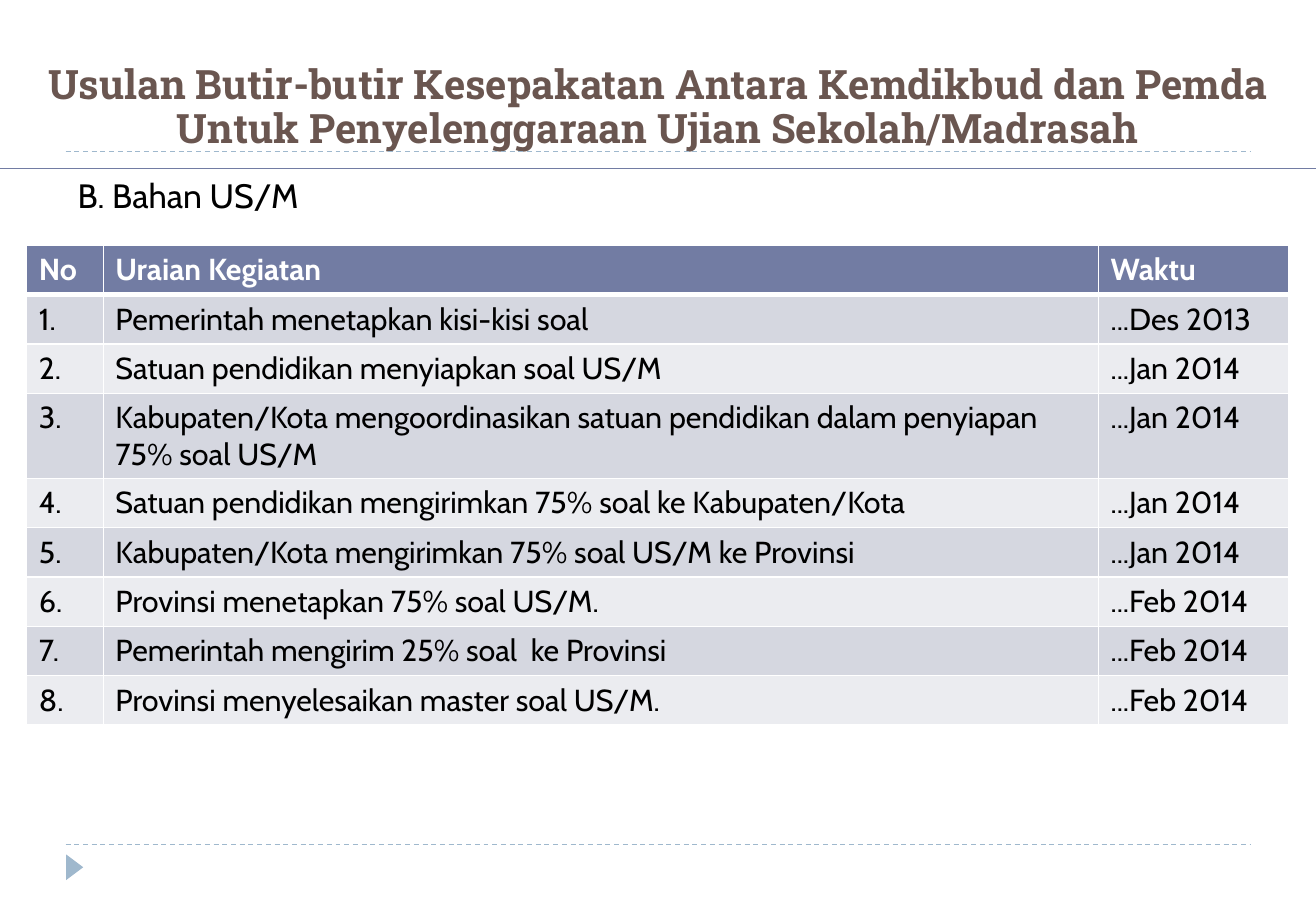
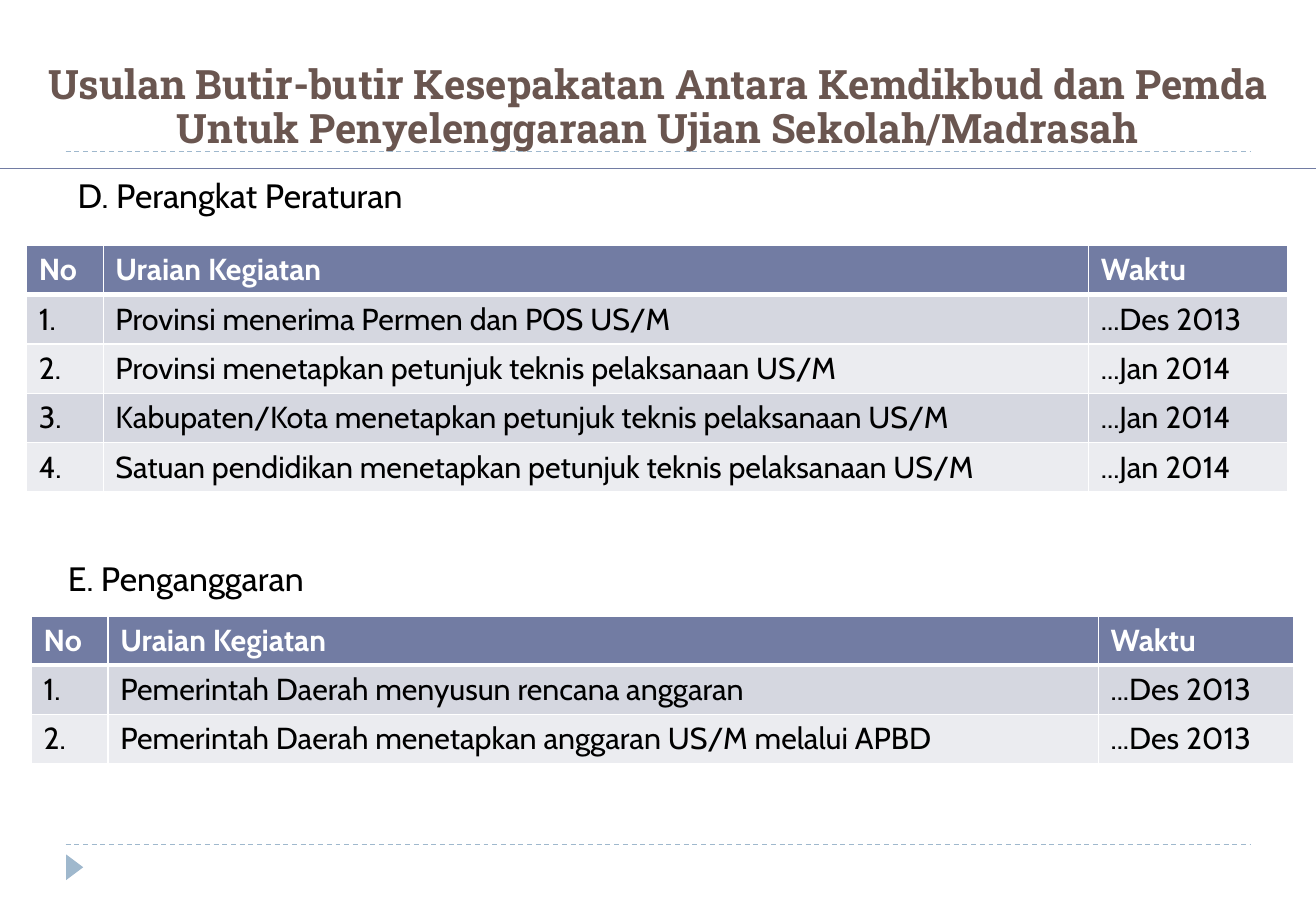
import pptx
import pptx.dml.color
import pptx.enum.dml
import pptx.enum.shapes
import pptx.enum.text
import pptx.oxml.ns
import pptx.util
from lxml import etree

EMU_PER_PX = 9144  # 100 px to the inch
SLIDE_WIDTH, SLIDE_HEIGHT = 1083, 750
COLORS = {
    "title": "6A5650",
    "text": "000000",
    "white": "FFFFFF",
    "header": "727CA3",
    "odd_row": "D5D7E0",
    "even_row": "EBECF0",
    "accent": "9FB8CD",
}
TITLE_FONT, BODY_FONT = "Roboto Slab", "Cabin"
TITLE = ("Usulan Butir-butir Kesepakatan Antara Kemdikbud dan Pemda "
         "Untuk Penyelenggaraan Ujian Sekolah/Madrasah")
HEADINGS = ("Uraian Kegiatan", "Waktu")

MATERIALS = [
    ("Pemerintah menetapkan kisi-kisi soal", "...Des 2013"),
    ("Satuan pendidikan menyiapkan soal US/M", "...Jan 2014"),
    ("Kabupaten/Kota mengoordinasikan satuan pendidikan dalam penyiapan "
     "75% soal US/M", "...Jan 2014"),
    ("Satuan pendidikan mengirimkan 75% soal ke Kabupaten/Kota", "...Jan 2014"),
    ("Kabupaten/Kota mengirimkan 75% soal US/M ke Provinsi", "...Jan 2014"),
    ("Provinsi menetapkan 75% soal US/M.", "...Feb 2014"),
    ("Pemerintah mengirim 25% soal  ke Provinsi", "...Feb 2014"),
    ("Provinsi menyelesaikan master soal US/M.", "...Feb 2014"),
]
REGULATIONS = [
    ("Provinsi menerima Permen dan POS US/M", "...Des 2013"),
    ("Provinsi menetapkan petunjuk teknis pelaksanaan US/M", "...Jan 2014"),
    ("Kabupaten/Kota menetapkan petunjuk teknis pelaksanaan US/M", "...Jan 2014"),
    ("Satuan pendidikan menetapkan petunjuk teknis pelaksanaan US/M", "...Jan 2014"),
]
BUDGET = [
    ("Pemerintah Daerah menyusun rencana anggaran", "...Des 2013"),
    ("Pemerintah Daerah menetapkan anggaran US/M melalui APBD", "...Des 2013"),
]


def px(length):
    return pptx.util.Emu(length * EMU_PER_PX)


ROW_HEIGHT = px(203) // 5


def rgb(name):
    return pptx.dml.color.RGBColor.from_string(COLORS[name])


def add_run(paragraph, text, size, color, font=BODY_FONT, bold=False):
    run = paragraph.add_run()
    run.text = text
    run.font.name = font
    run.font.size = pptx.util.Pt(size)
    run.font.bold = bold
    run.font.color.rgb = rgb(color)


def add_rule(slide, left, right, top, color, dashed=False):
    connector = slide.shapes.add_connector(
        pptx.enum.shapes.MSO_CONNECTOR.STRAIGHT, px(left), px(top), px(right), px(top))
    connector.line.color.rgb = rgb(color)
    connector.line.width = pptx.util.Pt(0.75)
    if dashed:
        connector.line.dash_style = pptx.enum.dml.MSO_LINE.DASH
    etree.SubElement(connector.element.spPr, pptx.oxml.ns.qn("a:effectLst"))


def add_marker(slide):
    triangle = slide.shapes.add_shape(
        pptx.enum.shapes.MSO_SHAPE.ISOSCELES_TRIANGLE, px(51), px(707), px(21), px(14))
    triangle.rotation = 90
    triangle.shadow.inherit = False
    triangle.fill.solid()
    triangle.fill.fore_color.rgb = rgb("accent")
    triangle.line.fill.background()


def format_title(title):
    title.left, title.top, title.width, title.height = px(0), px(5), px(SLIDE_WIDTH), px(125)
    frame = title.text_frame
    frame.auto_size = pptx.enum.text.MSO_AUTO_SIZE.NONE
    frame.vertical_anchor = pptx.enum.text.MSO_ANCHOR.BOTTOM
    paragraph = frame.paragraphs[0]
    paragraph.alignment = pptx.enum.text.PP_ALIGN.CENTER
    paragraph.line_spacing = 0.9
    add_run(paragraph, TITLE, 24, "title", TITLE_FONT, bold=True)


def add_base_slide(presentation):
    """Add a slide with the shared title, rules and footer marker."""
    slide = presentation.slides.add_slide(presentation.slide_layouts[5])
    format_title(slide.shapes.title)
    for top in (125, 695):
        add_rule(slide, 54, 1029, top, "accent", dashed=True)
    add_rule(slide, 0, SLIDE_WIDTH, 139, "header")
    add_marker(slide)
    return slide


def add_section_heading(slide, left, top, text):
    box = slide.shapes.add_textbox(px(left), px(top), px(976), px(47))
    box.text_frame.word_wrap = True
    paragraph = box.text_frame.paragraphs[0]
    paragraph.space_before = pptx.util.Pt(6)
    add_run(paragraph, text, 20, "text")


def set_borders(cell, **widths):
    """Draw white cell borders; widths are points for L, R, T and B."""
    properties = cell._tc.get_or_add_tcPr()
    for side in "LRTB":
        line = etree.SubElement(properties, pptx.oxml.ns.qn("a:ln" + side),
                                w=str(pptx.util.Pt(widths.get(side, 1))))
        fill = etree.SubElement(line, pptx.oxml.ns.qn("a:solidFill"))
        etree.SubElement(fill, pptx.oxml.ns.qn("a:srgbClr"), val=COLORS["white"])


def add_schedule(slide, left, top, column_widths, activities):
    rows = [("No", *HEADINGS)]
    rows += [(f"{number}.", *activity) for number, activity in enumerate(activities, 1)]
    table = slide.shapes.add_table(
        len(rows), len(column_widths), px(left), px(top),
        px(sum(column_widths)), ROW_HEIGHT * len(rows)).table
    for column, width in zip(table.columns, column_widths):
        column.width = px(width)
    for row_index, texts in enumerate(rows):
        is_header = row_index == 0
        fill = "header" if is_header else "odd_row" if row_index % 2 else "even_row"
        thick = {0: {"B": 3}, 1: {"T": 3}}.get(row_index, {})
        for column_index, text in enumerate(texts):
            cell = table.cell(row_index, column_index)
            set_borders(cell, **thick)
            cell.fill.solid()
            cell.fill.fore_color.rgb = rgb(fill)
            add_run(cell.text_frame.paragraphs[0], text, 18,
                    "white" if is_header else "text", bold=is_header)


def main():
    presentation = pptx.Presentation()
    presentation.slide_width = px(SLIDE_WIDTH)
    presentation.slide_height = px(SLIDE_HEIGHT)

    slide = add_base_slide(presentation)
    add_section_heading(slide, 54, 139, "B. Bahan US/M")
    add_schedule(slide, 22, 202, (63, 819, 157), MATERIALS)

    slide = add_base_slide(presentation)
    add_section_heading(slide, 54, 139, "D. Perangkat Peraturan")
    add_schedule(slide, 22, 202, (63, 811, 164), REGULATIONS)
    add_section_heading(slide, 46, 454, "E. Penganggaran")
    add_schedule(slide, 26, 507, (63, 815, 161), BUDGET)

    presentation.save("out.pptx")


if __name__ == "__main__":
    main()
